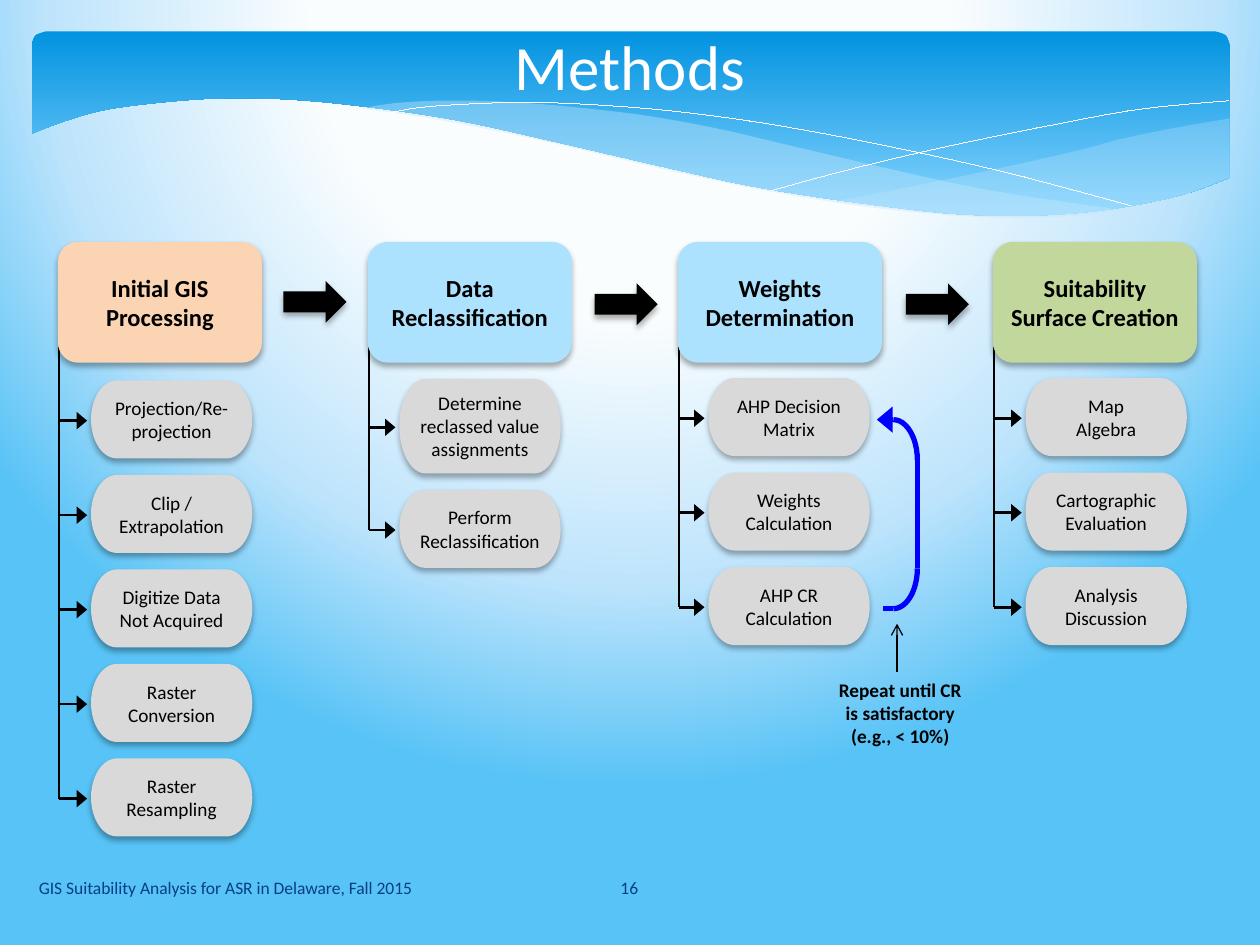
from dataclasses import dataclass

from lxml.etree import SubElement as Sub
from pptx import Presentation
from pptx.dml.color import RGBColor as RGB
from pptx.enum.shapes import MSO_CONNECTOR as Link, MSO_SHAPE as Kind
from pptx.enum.text import MSO_ANCHOR as Anchor, PP_ALIGN as Align
from pptx.oxml.ns import qn
from pptx.util import Pt


@dataclass(frozen=True)
class Theme:
    """Colours, type sizes and font of the slide."""
    font: str = "Calibri"
    black: str = "000000"
    white: str = "FFFFFF"
    navy: str = "073E87"
    blue: str = "0000FF"
    mist: str = "C6E7FC"
    peach: str = "FBD4B4"
    sky: str = "ADE2FE"
    green: str = "C2D79B"
    grey: str = "D9D9D9"
    back: tuple = ((40, "FAFDFE"), (74, "BEE4FC"), (100, "58C3F6"))
    band: tuple = ((0, "0293E0"), (96, "83D3FE"))
    title: int = 36
    head: int = 14
    body: int = 11
    foot: int = 10


T = Theme()
HEAD_W, HEAD_H, HEAD_Y = 116.6, 69.1, 138.2
PILL_W, PILL_H, GAP = 92.2, 44.6, 9.4

STEPS = [
    (33.1, 52, 217.4, T.peach, "Initial GIS Processing",
     [("Projection/Re-projection", PILL_H), ("Clip / Extrapolation", PILL_H),
      ("Digitize Data Not Acquired", PILL_H), ("Raster Conversion", PILL_H),
      ("Raster Resampling", PILL_H)]),
    (210.2, 228.2, 216.5, T.sky, "Data Reclassification",
     [("Determine reclassed value assignments", 54), ("Perform Reclassification", PILL_H)]),
    (387.4, 404.8, 216, T.sky, "Weights Determination",
     [("AHP Decision Matrix", PILL_H), ("Weights Calculation", PILL_H),
      ("AHP CR Calculation", PILL_H)]),
    (567.4, 586, 216, T.green, "Suitability Surface Creation",
     [("Map\nAlgebra", PILL_H), ("Cartographic Evaluation", PILL_H),
      ("Analysis Discussion", PILL_H)]),
]

BAND = [
    [(702.7, 101.5), (684, 108.7), (662.4, 114.5), (630, 120.2), (592.6, 123.1),
     (547.9, 122.4), (495.4, 116.6), (434.2, 107.3), (380.9, 95.8), (321.8, 82.1),
     (262.8, 69.1), (210.2, 61.2), (165.6, 56.9), (127.4, 56.2), (95, 58.3),
     (61.2, 62.6), (37.4, 69.1), (18, 76.4)],
    [(18, 26), (20.3, 20.3), (26, 18)],
    [(694.7, 18), (700.4, 20.3), (702.7, 26)],
]
RIGHT = [
    [(702.7, 67.7), (673.2, 72.7), (641.5, 79.2), (619.9, 85), (579.6, 94.3),
     (524.9, 105.8), (475.9, 115.2)],
    [(475.9, 115.2), (507.6, 118.8), (545, 122.4), (578.2, 123.8), (614.9, 122.4),
     (645.8, 118.8), (673.2, 112.3), (702.7, 101.5)],
]
MIDDLE = [
    [(643, 120.2), (602.6, 114.5), (558, 107.3), (508.3, 96.5), (452.9, 83.5),
     (409.7, 73.4), (370.1, 66.2), (334.8, 61.9), (302.4, 59), (273.6, 57.6),
     (247.7, 57.6), (225.4, 59), (205.9, 61.9)],
    [(205.9, 61.9), (246.2, 67.7), (290.9, 76.3), (323.3, 83.5), (381.6, 97.2),
     (432.7, 108), (478.8, 115.9), (519.8, 121), (556.6, 123.8), (589, 124.6),
     (617, 123.1), (643, 120.2)],
]
FALL = [[(222.5, 64.8), (236.2, 61.9), (261.4, 59.8), (299.5, 58.5), (337.7, 59.8),
         (383.8, 63.4), (437.8, 70.6), (500.4, 82.1), (572.4, 97.9), (646, 117.4)]]
RISE = [[(441.4, 108.7), (483.8, 97.2), (538.6, 84.2), (601.9, 71.3),
         (644.4, 63.4), (675.4, 59.8), (702, 57.6)]]


def shade(fill, stops, angle=None):
    """Set gradient stops, linear at an angle or round from above."""
    fill.gradient()
    grad = fill._fill._gradFill
    for kid in list(grad):
        grad.remove(kid)
    row = Sub(grad, qn("a:gsLst"))
    for pos, tint in stops:
        stop = Sub(row, qn("a:gs"), pos=str(pos * 1000))
        Sub(stop, qn("a:srgbClr"), val=tint)
    if angle is None:
        ring = Sub(grad, qn("a:path"), path="circle")
        Sub(ring, qn("a:fillToRect"), l="20000", t="-40000", r="20000", b="140000")
    else:
        Sub(grad, qn("a:lin"), ang=str(angle * 60000), scaled="0")


def paint(shape, fill=None, line=None, width=0.01):
    """Give a shape a plain fill and line without a shadow."""
    shape.shadow.inherit = False
    if fill:
        shape.fill.solid()
        shape.fill.fore_color.rgb = RGB.from_string(fill)
    else:
        shape.fill.background()
    if line:
        shape.line.color.rgb = RGB.from_string(line)
        shape.line.width = Pt(width)
    else:
        shape.line.fill.background()


def write(shape, text, size, tint, bold=False, align=Align.CENTER, inset=7.2,
          anchor=Anchor.MIDDLE, after=0):
    """Write text into a shape, one paragraph a line."""
    frame = shape.text_frame
    frame.word_wrap = True
    frame.vertical_anchor = anchor
    frame.margin_left = frame.margin_right = Pt(inset)
    for num, part in enumerate(text.split("\n")):
        para = frame.add_paragraph() if num else frame.paragraphs[0]
        para.alignment = align
        para.space_after = Pt(after)
        run = para.add_run()
        run.text = part
        run.font.name, run.font.size, run.font.bold = T.font, Pt(size), bold
        run.font.color.rgb = RGB.from_string(tint)


def raised(slide, kind, box, fill):
    """Add a filled shape with a soft shadow below it."""
    shape = slide.shapes.add_shape(kind, *map(Pt, box))
    paint(shape, fill)
    glow = Sub(shape._element.spPr.find(qn("a:effectLst")), qn("a:outerShdw"),
               blurRad=str(Pt(3.5)), dist=str(Pt(2.2)), dir="5400000", rotWithShape="0")
    tint = Sub(glow, qn("a:srgbClr"), val=T.black)
    Sub(tint, qn("a:alpha"), val="32000")
    return shape


def label(slide, box, text, size, tint, **look):
    """Add a text box."""
    write(slide.shapes.add_textbox(*map(Pt, box)), text, size, tint, **look)


def link(slide, ends, tint=T.black, width=1.5, tip=None, span="lg"):
    """Add a straight line with an optional arrowhead at its end."""
    line = slide.shapes.add_connector(Link.STRAIGHT, *map(Pt, ends))
    line.line.color.rgb = RGB.from_string(tint)
    line.line.width = Pt(width)
    if tip:
        Sub(line.line._get_or_add_ln(), qn("a:tailEnd"), type=tip, w=span)
    Sub(line._element.spPr, qn("a:effectLst"))


def smooth(dots, steps=6):
    """Return points of a smooth curve through the dots."""
    pad = [dots[0], *dots, dots[-1]]
    out = []
    for a, b, c, d in zip(pad, pad[1:], pad[2:], pad[3:]):
        for t in (num / steps for num in range(steps)):
            out.append(tuple(
                q + t / 2 * (r - p + t * (2 * p - 5 * q + 4 * r - s + t * (3 * (q - r) + s - p)))
                for p, q, r, s in zip(a, b, c, d)))
    return out + [dots[-1]]


def wave(slide, edges, fill=None, alpha=100, line=None):
    """Add a curved outline, closed when it has several edges."""
    dots = [(Pt(x), Pt(y)) for edge in edges for x, y in smooth(edge)]
    pen = slide.shapes.build_freeform(*dots[0], scale=1)
    pen.add_line_segments(dots[1:], close=len(edges) > 1)
    shape = pen.convert_to_shape()
    paint(shape, fill, line)
    if fill:
        tint = shape._element.spPr.find(qn("a:solidFill"))[0]
        Sub(tint, qn("a:alpha"), val=str(alpha * 1000))
    return shape


def banner(slide):
    """Draw the blue band and its waves."""
    shade(wave(slide, BAND).fill, T.band, 90)
    wave(slide, RIGHT, T.mist, 29)
    wave(slide, MIDDLE, T.mist, 40)
    wave(slide, FALL, line=T.white)
    wave(slide, RISE, line=T.white)


def column(slide, left, pill, top, fill, name, tasks):
    """Draw one step: its spine, its heading and its tasks."""
    spine, last = left + 0.7, 198
    spots = []
    for text, high in tasks:
        mid = top + high / 2 + 0.7
        link(slide, (spine, last, spine, mid))
        link(slide, (spine, mid, pill - 2.2, mid), tip="triangle")
        spots.append((text, (pill, top, PILL_W, high)))
        last, top = mid, top + high + GAP
    head = raised(slide, Kind.FLOWCHART_ALTERNATE_PROCESS, (left, HEAD_Y, HEAD_W, HEAD_H), fill)
    write(head, name, T.head, T.black, bold=True, inset=4)
    for text, box in spots:
        task = raised(slide, Kind.FLOWCHART_TERMINATOR, box, T.grey)
        write(task, text, T.body, T.black, inset=5.5)


def loop(slide):
    """Draw the blue way back and its note."""
    for top, start, end in ((239.8, 162, 0), (301.8, 0, 54)):
        arc = slide.shapes.add_shape(Kind.ARC, *map(Pt, (496.8, top, 27.4, 46)))
        paint(arc, line=T.blue, width=3)
        arc.adjustments[0], arc.adjustments[1] = start, end
    link(slide, (510.5, 239.8, 501.1, 239.8), T.blue, 3, "triangle")
    link(slide, (524.2, 262.8, 524.2, 324.8), T.blue, 3)
    link(slide, (510.5, 347.8, 504.7, 347.8), T.blue, 3)
    link(slide, (512.6, 383.8, 512.6, 356.4), width=0.75, tip="arrow", span="med")
    label(slide, (468, 383.8, 92.9, 41), "Repeat until CR is satisfactory (e.g., < 10%)",
          T.body, T.black, bold=True, anchor=Anchor.TOP, after=10)


def main():
    """Build and save the slide."""
    deck = Presentation()
    deck.slide_width, deck.slide_height = Pt(720), Pt(540)
    slide = deck.slides.add_slide(deck.slide_layouts[6])
    shade(slide.background.fill, T.back)
    banner(slide)
    label(slide, (15.1, 492.5, 298, 28.8), "GIS Suitability Analysis for ASR in Delaware, Fall 2015",
          T.foot, T.navy, align=Align.LEFT)
    label(slide, (313.9, 492.5, 91.4, 28.8), "16", T.foot, T.navy)
    label(slide, (36, -12.2, 648, 98.6), "Methods", T.title, T.white)
    for step in STEPS:
        column(slide, *step)
    for left, top in ((162, 160.6), (339.8, 162), (517.7, 162)):
        raised(slide, Kind.RIGHT_ARROW, (left, top, 36, 23.8), T.black)
    loop(slide)
    deck.save("out.pptx")


if __name__ == "__main__":
    main()
